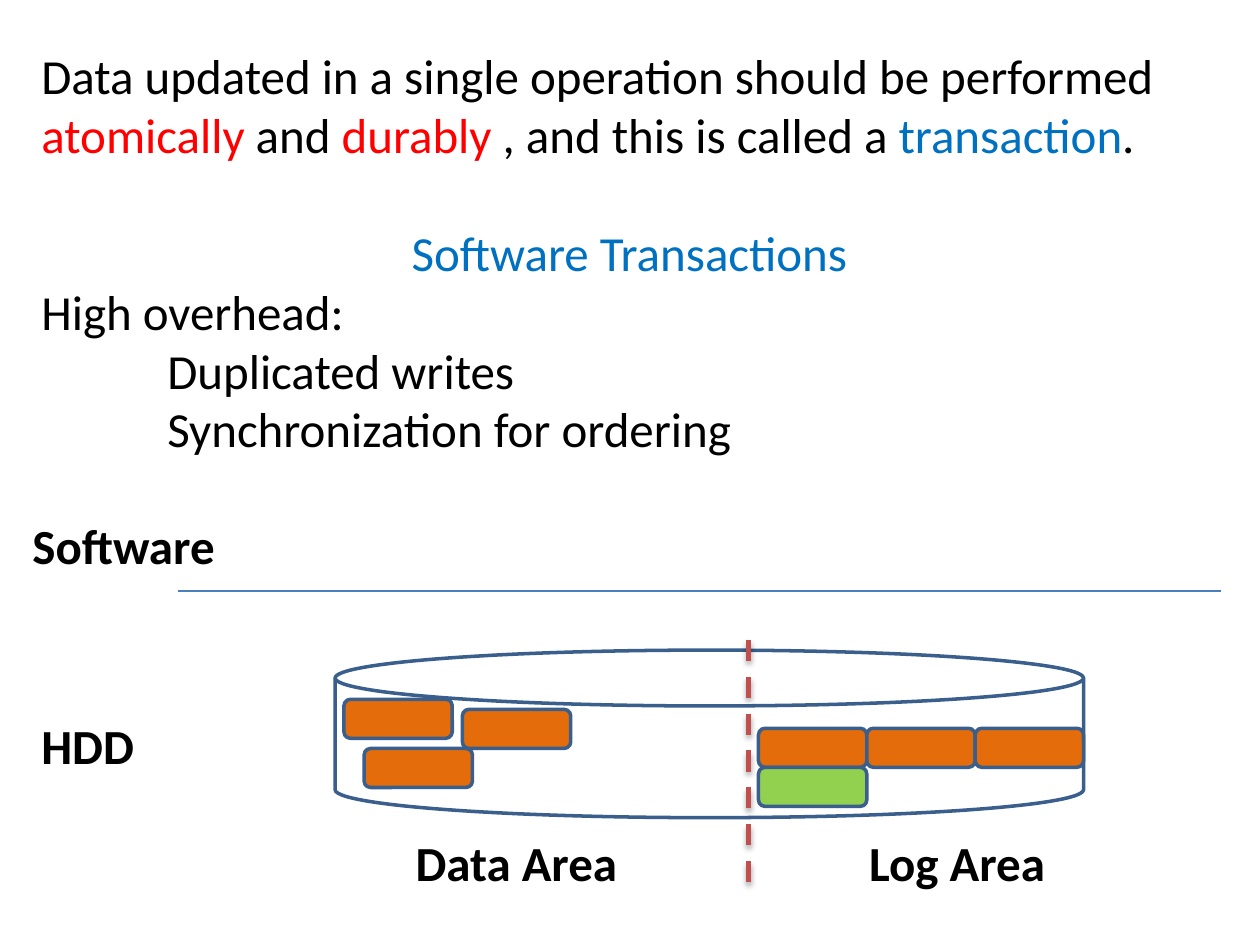
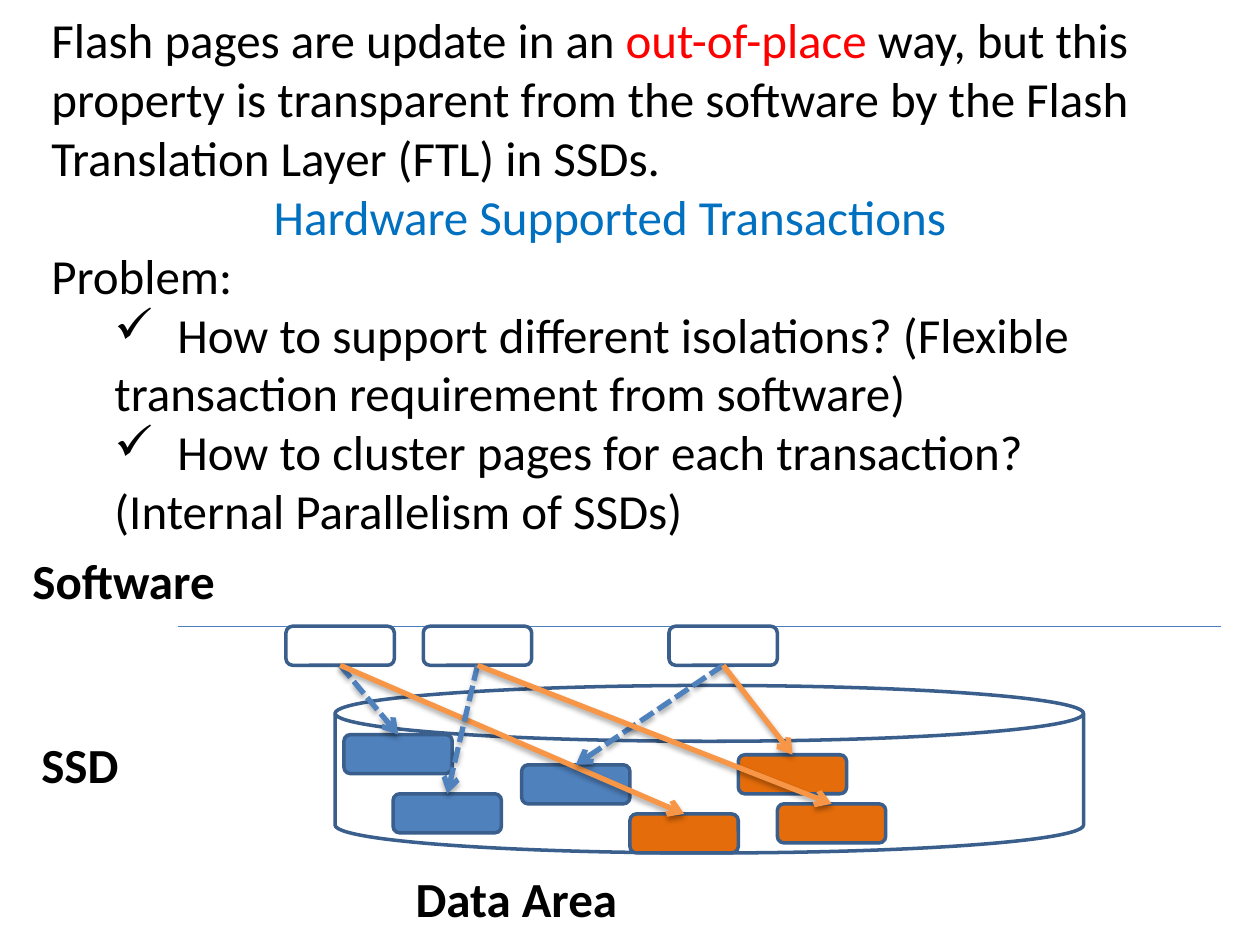
"""Two slides on software and hardware supported transactions."""
from lxml import etree
from pptx import Presentation
from pptx import util as u
from pptx.dml.color import RGBColor
from pptx.enum import dml, shapes, text
from pptx.oxml import parse_xml
from pptx.oxml.ns import nsdecls, qn

BLACK, WHITE, RED, BLUE = "000000", "FFFFFF", "FF0000", "0070C0"
ORANGE, GREEN, STEEL, AMBER = "E46C0A", "92D050", "4F81BD", "F79646"
OUTLINE, RULE, DIVIDER = "3A5F8C", "4B7EBC", "C0504D"
BLOCK_W, BLOCK_H = 0.86, 0.31
SHADOW = (
    f'<a:effectLst {nsdecls("a")}><a:outerShdw blurRad="40000" dist="23000" '
    'dir="5400000" rotWithShape="0"><a:srgbClr val="000000">'
    '<a:alpha val="35000"/></a:srgbClr></a:outerShdw></a:effectLst>'
)


def color(hex_string):
    """Return the colour for a hex string."""
    return RGBColor.from_string(hex_string)


class Deck:
    """Hold the shared style and the current slide."""

    font, size = "Calibri", 28

    def __init__(self):
        """Open a 10 by 7.5 inch presentation."""
        self.prs = Presentation()
        self.prs.slide_width, self.prs.slide_height = u.Inches(10), u.Inches(7.5)

    def slide(self):
        """Start a blank slide."""
        self.s = self.prs.slides.add_slide(self.prs.slide_layouts[6])

    def textbox(self, x, y, w, h):
        """Add a wrapping text box and return its frame."""
        tf = self.s.shapes.add_textbox(*map(u.Inches, (x, y, w, h))).text_frame
        tf.word_wrap = True
        return tf

    def run(self, p, words, ink=BLACK, bold=False):
        """Add one styled run to a paragraph."""
        r = p.add_run()
        r.text = words
        r.font.name, r.font.size, r.font.bold = self.font, u.Pt(self.size), bold
        r.font.color.rgb = color(ink)

    def label(self, words, x, y, w=1.8):
        """Add a bold one-line label."""
        self.run(self.textbox(x, y, w, 0.57).paragraphs[0], words, bold=True)

    def body(self, x, y, w, h, paragraphs):
        """Add paragraphs given as (kind, runs) pairs."""
        tf = self.textbox(x, y, w, h)
        for i, (kind, runs) in enumerate(paragraphs):
            p = tf.paragraphs[0] if i == 0 else tf.add_paragraph()
            pPr = p._p.get_or_add_pPr()
            if kind.startswith("heading"):
                p.alignment = text.PP_ALIGN.CENTER
                if kind == "heading apart":
                    p.space_before = u.Pt(34)
            elif kind == "indented":
                pPr.set("marL", str(u.Inches(1)))
            elif kind == "check":
                p.level = 1
                pPr.set("marL", str(u.Inches(0.5)))
                pPr.set("indent", "0")
                etree.SubElement(pPr, qn("a:buChar")).set("char", "✓")
            for words, ink in runs:
                self.run(p, words, ink)

    def shape(self, kind, x, y, w, h, fill):
        """Add an outlined preset shape."""
        sp = self.s.shapes.add_shape(kind, *map(u.Inches, (x, y, w, h)))
        sp.shadow.inherit = False
        sp.fill.solid()
        sp.fill.fore_color.rgb = color(fill)
        sp.line.color.rgb = color(OUTLINE)
        sp.line.width = u.Pt(2)
        return sp

    def block(self, x, y, fill):
        """Add one page block."""
        kind = shapes.MSO_SHAPE.ROUNDED_RECTANGLE
        return self.shape(kind, x, y, BLOCK_W, BLOCK_H, fill)

    def line(self, x1, y1, x2, y2, ink, width=3, dash=None, shadow=True):
        """Add a straight line."""
        cn = self.s.shapes.add_connector(
            shapes.MSO_CONNECTOR.STRAIGHT, *map(u.Inches, (x1, y1, x2, y2)))
        cn.line.color.rgb = color(ink)
        cn.line.width = u.Pt(width)
        if dash:
            cn.line.dash_style = dash
        spPr = cn._element.spPr
        if shadow:
            spPr.append(parse_xml(SHADOW))
        else:
            etree.SubElement(spPr, qn("a:effectLst"))
        return cn

    def arrow(self, page, target, ink, dash=None):
        """Point from the bottom of a page to the top of a block."""
        cn = self.line(0, 0, 1, 1, ink, dash=dash)
        cn.begin_connect(page, 2)
        cn.end_connect(target, 0)
        etree.SubElement(cn.line._get_or_add_ln(), qn("a:tailEnd")).set("type", "arrow")

    def storage(self, top, device, device_y):
        """Draw the software boundary at top and the disk below it."""
        self.line(1.41, top, 9.69, top, RULE, 0.75, shadow=False)
        self.shape(shapes.MSO_SHAPE.FLOWCHART_MAGNETIC_DISK,
                   2.66, top + 0.47, 5.94, 1.33, WHITE)
        self.label("Software", 0.16, top - 0.65)
        self.label(device, 0.23, device_y)
        self.label("Data Area", 3.2, top + 1.87, 2.27)


def software_slide(deck):
    """Build the slide on software transactions."""
    deck.slide()
    deck.storage(4.69, "HDD", 5.63)
    deck.label("Log Area", 6.8, 6.56)
    deck.body(0.23, 0.31, 9.53, 3.87, [
        ("plain", [("Data updated in a single operation should be performed ", BLACK),
                   ("atomically ", RED), ("and ", BLACK), ("durably", RED),
                   (" , and this is called a ", BLACK), ("transaction", BLUE),
                   (".", BLACK)]),
        ("heading apart", [("Software Transactions", BLUE)]),
        ("plain", [("High overhead:", BLACK)]),
        ("indented", [("Duplicated writes", BLACK)]),
        ("indented", [("Synchronization for ordering", BLACK)]),
    ])
    for x, y in [(2.73, 5.55), (2.89, 5.94), (3.67, 5.63)]:
        deck.block(x, y, ORANGE)
    log_x, log_y = 6.02, 5.78
    for i in range(3):
        deck.block(log_x + i * BLOCK_W, log_y, ORANGE)
    deck.block(log_x, log_y + BLOCK_H, GREEN)
    deck.line(5.94, 5.08, 5.94, 7.11, DIVIDER, dash=dml.MSO_LINE.DASH)


def hardware_slide(deck):
    """Build the slide on hardware supported transactions."""
    deck.slide()
    top = 4.97
    deck.storage(top, "SSD", 5.78)
    deck.body(0.31, 0.03, 9.06, 4.81, [
        ("plain", [("Flash pages are update in an ", BLACK), ("out-of-place", RED),
                   (" way, but this property is transparent from the software by "
                    "the Flash Translation Layer (FTL) in SSDs.", BLACK)]),
        ("heading", [("Hardware Supported Transactions", BLUE)]),
        ("plain", [("Problem:", BLACK)]),
        ("check", [("\tHow to support different isolations? (Flexible transaction "
                    "requirement from software)", BLACK)]),
        ("check", [("\tHow to cluster pages for each transaction? (Internal "
                    "Parallelism of SSDs)", BLACK)]),
    ])
    updates = [
        (2.27, (2.73, 5.83), (5, 6.46)),
        (5.31, (4.14, 6.07), (5.86, 5.99)),
        (3.36, (3.12, 6.3), (6.17, 6.38)),
    ]
    moves = [(deck.block(x, top, WHITE), deck.block(*old, STEEL),
              deck.block(*new, ORANGE)) for x, old, new in updates]
    for page, old, new in moves:
        deck.arrow(page, old, STEEL, dml.MSO_LINE.SQUARE_DOT)
        deck.arrow(page, new, AMBER)


def main():
    """Build and save both slides."""
    deck = Deck()
    software_slide(deck)
    hardware_slide(deck)
    deck.prs.save("out.pptx")


if __name__ == "__main__":
    main()
